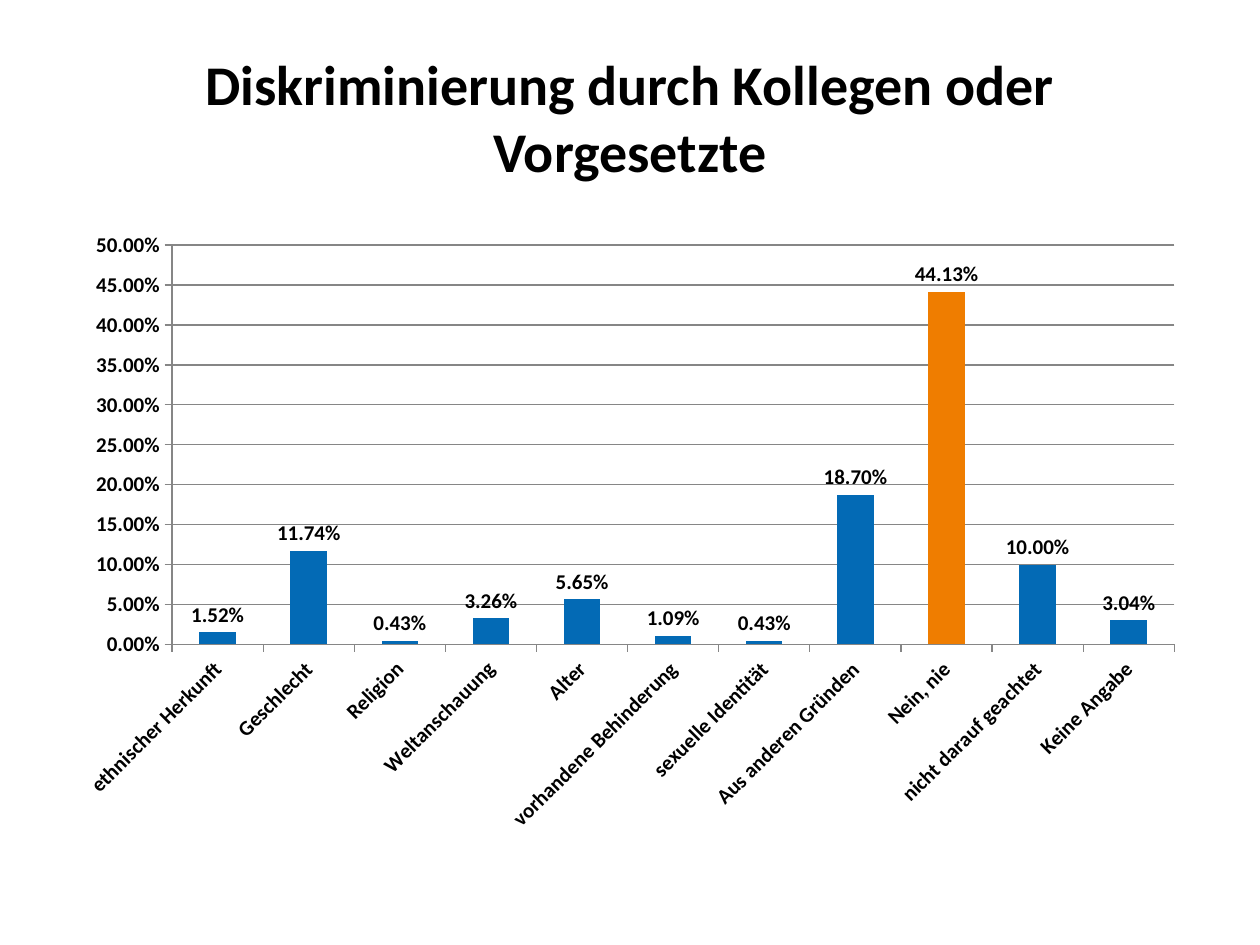
"""Build a slide with a column chart on discrimination at work."""
from pptx import Presentation
from pptx.chart.data import CategoryChartData
from pptx.dml.color import RGBColor
from pptx.enum.chart import XL_CHART_TYPE as ChartType
from pptx.enum.chart import XL_LABEL_POSITION as LabelPosition
from pptx.enum.chart import XL_TICK_MARK as TickMark
from pptx.enum.text import MSO_ANCHOR as Anchor
from pptx.enum.text import PP_ALIGN as Align
from pptx.util import Inches, Pt

BLACK = RGBColor(0x00, 0x00, 0x00)
GREY = RGBColor(0x86, 0x86, 0x86)
BLUE = RGBColor(0x03, 0x6A, 0xB5)
ORANGE = RGBColor(0xEF, 0x7D, 0x00)
WIDTH, HEIGHT = Inches(10), Inches(7.5)
FONT = "Calibri"
PERCENT = "0.00%"
HIGHLIGHT = "Nein, nie"
ANSWERS = {
    "ethnischer Herkunft": 0.0152,
    "Geschlecht": 0.1174,
    "Religion": 0.0043,
    "Weltanschauung": 0.0326,
    "Alter": 0.0565,
    "vorhandene Behinderung": 0.0109,
    "sexuelle Identität": 0.0043,
    "Aus anderen Gründen": 0.187,
    HIGHLIGHT: 0.4413,
    "nicht darauf geachtet": 0.1,
    "Keine Angabe": 0.0304,
}


def area(left, top, width, height):
    """Turn shares of the slide into a position and size."""
    return (int(left * WIDTH), int(top * HEIGHT),
            int(width * WIDTH), int(height * HEIGHT))


def style_font(font, size):
    """Apply the bold black slide font."""
    font.name, font.size, font.bold = FONT, Pt(size), True
    font.color.rgb = BLACK


def fill_solid(fill, color):
    """Give a fill one colour."""
    fill.solid()
    fill.fore_color.rgb = color


def add_title(slide, text):
    """Add the centred headline."""
    frame = slide.shapes.add_textbox(*area(0.05, 0.04, 0.9, 1 / 6)).text_frame
    frame.word_wrap = True
    frame.vertical_anchor = Anchor.MIDDLE
    paragraph = frame.paragraphs[0]
    paragraph.text = text
    paragraph.alignment = Align.CENTER
    style_font(paragraph.font, 32)


def style_axis(axis):
    """Give an axis a grey line with outer ticks."""
    axis.major_tick_mark = TickMark.OUTSIDE
    axis.minor_tick_mark = TickMark.NONE
    axis.format.line.color.rgb = GREY
    axis.format.line.width = Pt(0.75)


def add_answer_chart(slide):
    """Add the column chart of the answers."""
    data = CategoryChartData(number_format=PERCENT)
    data.categories = list(ANSWERS)
    data.add_series("Series 1", list(ANSWERS.values()))
    chart = slide.shapes.add_chart(
        ChartType.COLUMN_CLUSTERED, *area(0.05, 0.233, 0.9, 0.66), data).chart
    chart.has_legend = chart.has_title = False
    style_font(chart.font, 12)

    category_axis, value_axis = chart.category_axis, chart.value_axis
    for axis in (category_axis, value_axis):
        style_axis(axis)
    category_axis.has_major_gridlines = False
    value_axis.minimum_scale, value_axis.maximum_scale = 0, 0.5
    value_axis.major_unit = 0.05
    value_axis.tick_labels.number_format = PERCENT
    value_axis.tick_labels.number_format_is_linked = False
    value_axis.has_major_gridlines = True
    grid_line = value_axis.major_gridlines.format.line
    grid_line.color.rgb = GREY
    grid_line.width = Pt(0.75)

    plot = chart.plots[0]
    plot.gap_width = 150
    plot.vary_by_categories = False
    plot.has_data_labels = True
    labels = plot.data_labels
    labels.show_value = True
    labels.number_format = PERCENT
    labels.number_format_is_linked = False
    labels.position = LabelPosition.OUTSIDE_END
    style_font(labels.font, 12)

    series = plot.series[0]
    fill_solid(series.format.fill, BLUE)
    highlight = series.points[list(ANSWERS).index(HIGHLIGHT)]
    fill_solid(highlight.format.fill, ORANGE)


def main():
    """Build and save the presentation."""
    presentation = Presentation()
    presentation.slide_width, presentation.slide_height = WIDTH, HEIGHT
    slide = presentation.slides.add_slide(presentation.slide_layouts[6])
    add_title(slide, "Diskriminierung durch Kollegen oder Vorgesetzte")
    add_answer_chart(slide)
    presentation.save("out.pptx")


if __name__ == "__main__":
    main()
